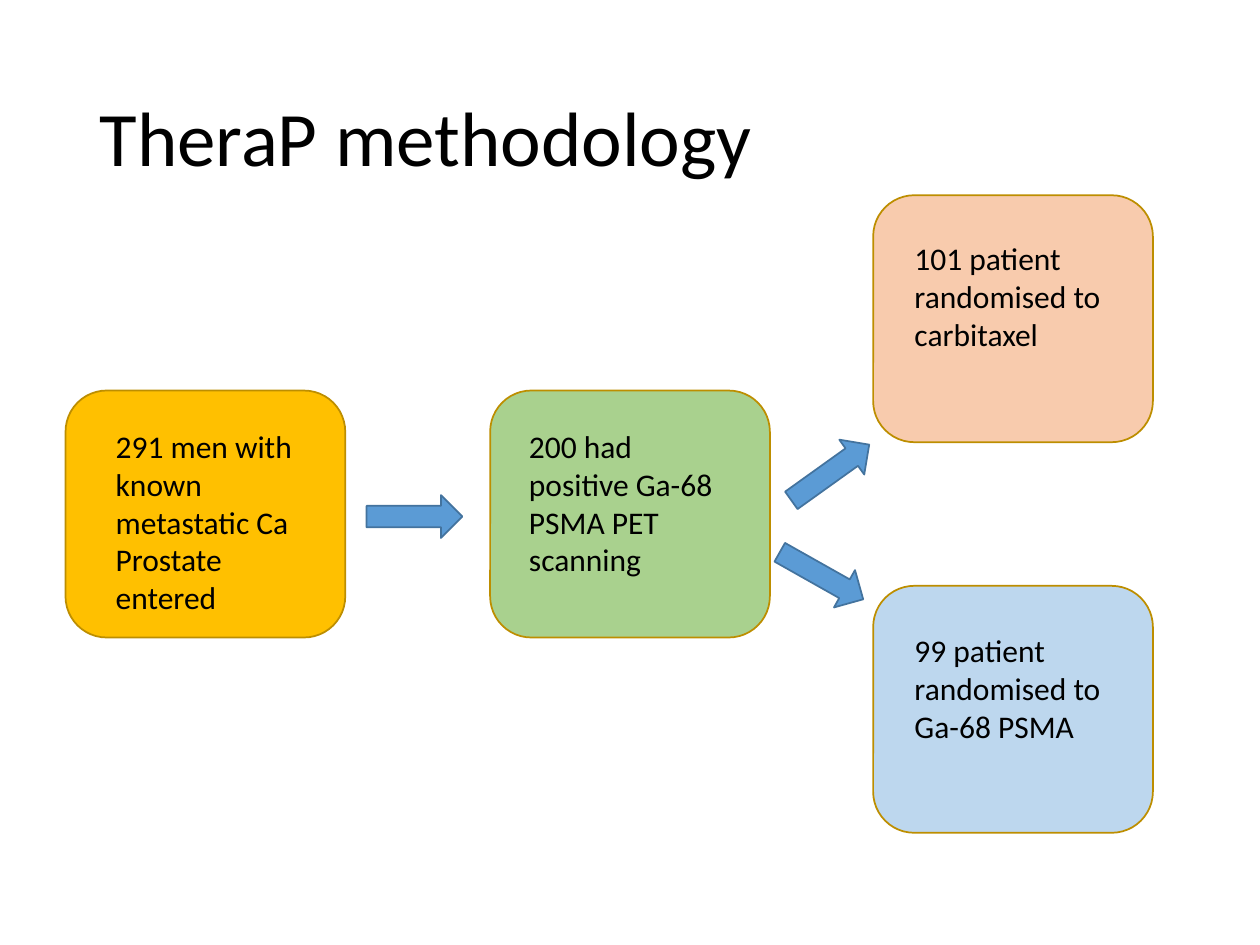
from pptx import Presentation
from pptx.dml.color import RGBColor
from pptx.enum.shapes import MSO_SHAPE
from pptx.enum.text import MSO_ANCHOR, MSO_AUTO_SIZE, PP_ALIGN
from pptx.util import Inches, Pt

COLORS = {
    "text": "000000",
    "box_line": "BD8E00",
    "entered": "FFC000",
    "scanned": "A9D18E",
    "chemotherapy": "F8CBAD",
    "radioligand": "BDD7EE",
    "arrow": "5B9BD5",
    "arrow_line": "43739E",
}
BOX_SIZE = (2.22, 1.96)
ARROW_SIZE = (0.76, 0.34)

# fill, box left and top, label left, top, width and height, wording
STAGES = [
    ("entered", (0.52, 3.1), (0.82, 3.34, 1.7, 1.62),
     "291 men with known metastatic Ca Prostate entered"),
    ("scanned", (3.89, 3.1), (4.1, 3.34, 1.76, 1.31),
     "200 had positive Ga-68 PSMA PET scanning"),
    ("chemotherapy", (6.93, 1.55), (7.16, 1.85, 1.83, 1.01),
     "101 patient randomised to carbitaxel"),
    ("radioligand", (6.93, 4.65), (7.16, 4.96, 1.74, 1.01),
     "99 patient randomised to Ga-68 PSMA"),
]
# left, top, rotation
ARROWS = [(2.91, 3.93, 0), (6.21, 3.58, 324.4), (6.14, 4.4, 29.4)]


def color(name):
    return RGBColor.from_string(COLORS[name])


def write_text(frame, text, size=18, font="Calibri", fill="text",
               anchor=MSO_ANCHOR.TOP, line_spacing=None):
    frame.word_wrap = True
    frame.vertical_anchor = anchor
    paragraph = frame.paragraphs[0]
    paragraph.alignment = PP_ALIGN.LEFT
    paragraph.line_spacing = line_spacing
    run = paragraph.add_run()
    run.text = text
    run.font.size = Pt(size)
    run.font.name = font
    run.font.color.rgb = color(fill)


class FlowSlide:
    def __init__(self, presentation):
        self.slide = presentation.slides.add_slide(presentation.slide_layouts[5])
        self.line_width = Pt(1)

    def title(self, text, left, top, width, height):
        title = self.slide.shapes.title
        title.left, title.top = Inches(left), Inches(top)
        title.width, title.height = Inches(width), Inches(height)
        title.text_frame.auto_size = MSO_AUTO_SIZE.NONE
        write_text(title.text_frame, text, size=44,
                   anchor=MSO_ANCHOR.MIDDLE, line_spacing=0.9)

    def shape(self, kind, left, top, size, fill, line):
        shape = self.slide.shapes.add_shape(
            kind, Inches(left), Inches(top), *map(Inches, size))
        shape.shadow.inherit = False
        shape.fill.solid()
        shape.fill.fore_color.rgb = color(fill)
        shape.line.color.rgb = color(line)
        shape.line.width = self.line_width
        return shape

    def box(self, left, top, fill):
        self.shape(MSO_SHAPE.ROUNDED_RECTANGLE, left, top, BOX_SIZE, fill, "box_line")

    def arrow(self, left, top, rotation):
        arrow = self.shape(MSO_SHAPE.RIGHT_ARROW, left, top, ARROW_SIZE,
                           "arrow", "arrow_line")
        arrow.rotation = rotation

    def label(self, text, left, top, width, height):
        label = self.slide.shapes.add_textbox(
            Inches(left), Inches(top), Inches(width), Inches(height))
        write_text(label.text_frame, text)
        label.text_frame.auto_size = MSO_AUTO_SIZE.SHAPE_TO_FIT_TEXT


def main():
    presentation = Presentation()
    presentation.slide_width = Inches(10)
    presentation.slide_height = Inches(7.5)
    flow = FlowSlide(presentation)
    flow.title("TheraP methodology", 0.69, 0.4, 8.62, 1.45)
    for fill, box_position, label_area, text in STAGES:
        flow.box(*box_position, fill)
        flow.label(text, *label_area)
    for left, top, rotation in ARROWS:
        flow.arrow(left, top, rotation)
    presentation.save("out.pptx")


if __name__ == "__main__":
    main()
